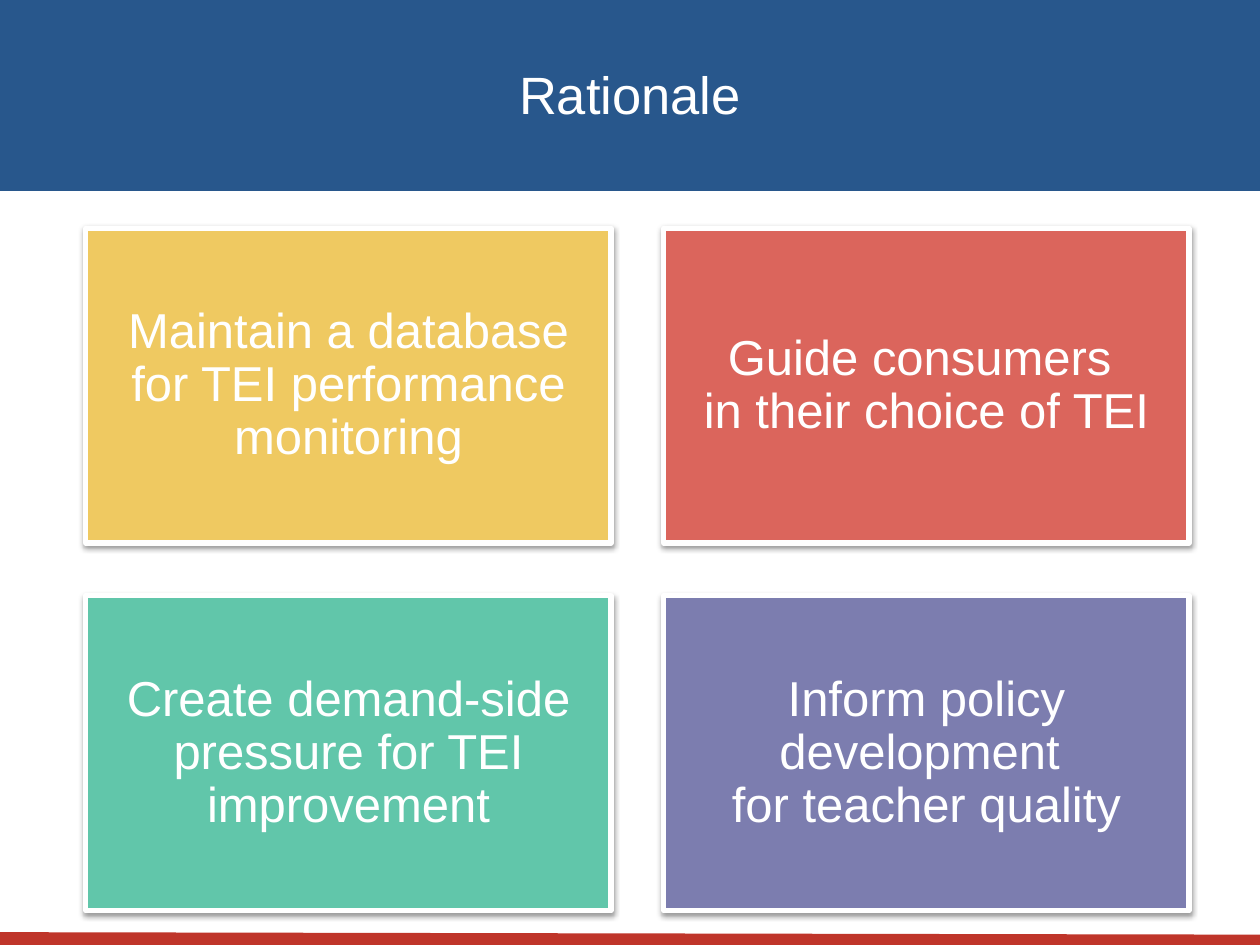
from lxml import etree
from pptx import Presentation
from pptx import util as u
from pptx.dml.color import RGBColor
from pptx.enum import shapes, text
from pptx.oxml import ns

WHITE = RGBColor(0xFF, 0xFF, 0xFF)
BLACK = RGBColor(0x00, 0x00, 0x00)
BLUE = RGBColor(0x28, 0x57, 0x8C)
RED = RGBColor(0xBF, 0x35, 0x2A)
YELLOW = RGBColor(0xEF, 0xC9, 0x61)
CORAL = RGBColor(0xDB, 0x65, 0x5C)
GREEN = RGBColor(0x61, 0xC6, 0xAA)
VIOLET = RGBColor(0x7C, 0x7D, 0xAF)

REASONS = [
    (YELLOW, ["Maintain a database for TEI performance monitoring"]),
    (CORAL, ["Guide consumers ", "in their choice of TEI"]),
    (GREEN, ["Create demand-side pressure for TEI improvement"]),
    (VIOLET, ["Inform policy development ", "for teacher quality"]),
]


def apply(target, values):
    for name, value in values.items():
        setattr(target, name, value)


class SlideBuilder:
    font = {"name": "Arial"}
    card_frame = dict.fromkeys(
        ("margin_left", "margin_top", "margin_right", "margin_bottom"),
        u.Cm(0.3))

    def __init__(self, slide):
        self.slide = slide

    def box(self, place, fill, lines, size, spacing=1.0, frame=None):
        shape = self.slide.shapes.add_shape(
            shapes.MSO_SHAPE.RECTANGLE, *map(u.Cm, place))
        shape.shadow.inherit = False
        shape.fill.solid()
        shape.fill.fore_color.rgb = fill
        shape.line.fill.background()
        text_frame = shape.text_frame
        apply(text_frame, {"word_wrap": True,
                           "vertical_anchor": text.MSO_ANCHOR.MIDDLE,
                           **(frame or {})})
        text_frame.text = "\n".join(lines)
        for paragraph in text_frame.paragraphs:
            apply(paragraph, {"alignment": text.PP_ALIGN.CENTER,
                              "line_spacing": spacing})
            for run in paragraph.runs:
                apply(run.font, {**self.font, "size": u.Pt(size)})
                run.font.color.rgb = WHITE
        return shape

    def card(self, place, fill, lines):
        shape = self.box(place, fill, lines, 28, 0.9, self.card_frame)
        shape.line.color.rgb = WHITE
        shape.line.width = u.Pt(3)
        self.cast_shadow(shape)

    def cast_shadow(self, shape):
        effects = shape._element.spPr.find(ns.qn("a:effectLst"))
        shadow = etree.SubElement(
            effects, ns.qn("a:outerShdw"), blurRad=str(int(u.Pt(3.1))),
            dist=str(int(u.Pt(1.6))), dir="5400000", rotWithShape="0")
        color = etree.SubElement(shadow, ns.qn("a:srgbClr"), val=str(BLACK))
        etree.SubElement(color, ns.qn("a:alpha"), val="38000")

    def rule(self, start, end, color, width):
        connector = self.slide.shapes.add_connector(
            shapes.MSO_CONNECTOR.STRAIGHT, *map(u.Cm, start + end))
        connector.line.color.rgb = color
        connector.line.width = u.Pt(width)
        etree.SubElement(connector._element.spPr, ns.qn("a:effectLst"))


def main():
    presentation = Presentation()
    apply(presentation, {"slide_width": u.Cm(25.4),
                         "slide_height": u.Cm(19.05)})
    slide = presentation.slides.add_slide(presentation.slide_layouts[6])
    builder = SlideBuilder(slide)

    left, top, width, height = 1.73, 4.6, 10.59, 6.35
    gap = 1.06
    for index, (fill, lines) in enumerate(REASONS):
        row, column = divmod(index, 2)
        place = (left + column * (width + gap), top + row * (height + gap),
                 width, height)
        builder.card(place, fill, lines)

    builder.box((0, -0.08, 25.4, 3.93), BLUE, ["Rationale"], 30)
    builder.rule((-0.03, 18.95), (25.43, 19), RED, 9)
    presentation.save("out.pptx")


if __name__ == "__main__":
    main()
